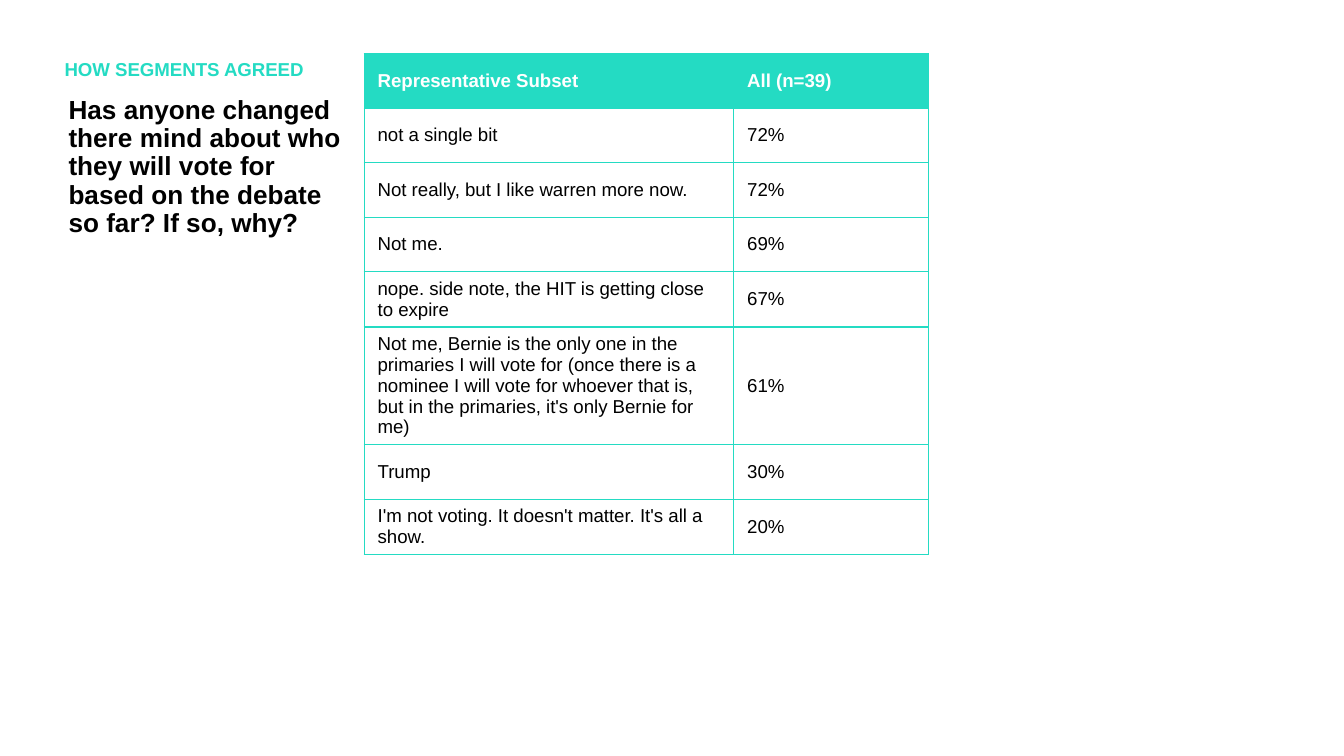
from dataclasses import dataclass

from lxml.etree import SubElement
from pptx import Presentation
from pptx.dml.color import RGBColor as RGB
from pptx.enum.text import MSO_ANCHOR as ANCHOR, MSO_AUTO_SIZE as AUTO, PP_ALIGN as ALIGN
from pptx.oxml.ns import qn
from pptx.util import Pt


@dataclass(frozen=True)
class Theme:
    """Colours, font and type sizes of the slide."""
    accent: str = "24DBC3"
    ink: str = "000000"
    paper: str = "FFFFFF"
    font: str = "Arial"
    title: int = 14
    body: int = 10
    border: float = 0.75


ROWS = [
    ("Representative Subset", "All (n=39)"),
    ("not a single bit", "72%"),
    ("Not really, but I like warren more now.", "72%"),
    ("Not me.", "69%"),
    ("nope. side note, the HIT is getting close to expire", "67%"),
    ("Not me, Bernie is the only one in the primaries I will vote for (once there is a "
     "nominee I will vote for whoever that is, but in the primaries, it's only Bernie for me)",
     "61%"),
    ("Trump", "30%"),
    ("I'm not voting. It doesn't matter. It's all a show.", "20%"),
]


def write(tf, text, *, font, size, color, bold=False, spacing=None):
    """Put one formatted, left-aligned paragraph in a text frame."""
    p = tf.paragraphs[0]
    p.alignment = ALIGN.LEFT
    if spacing:
        p.line_spacing = spacing
    r = p.add_run()
    r.text = text
    r.font.name = font
    r.font.size = Pt(size)
    r.font.bold = bold
    r.font.color.rgb = RGB.from_string(color)


def outline(cell, color, width):
    """Draw all four borders of a table cell."""
    tcPr = cell._tc.get_or_add_tcPr()
    for i, side in enumerate(("a:lnL", "a:lnR", "a:lnT", "a:lnB")):
        ln = SubElement(tcPr, qn(side), w=str(Pt(width)))
        SubElement(SubElement(ln, qn("a:solidFill")), qn("a:srgbClr"), val=color)
        tcPr.insert(i, ln)


class Deck:
    """Hold the theme and the current slide."""

    def __init__(self, prs, theme):
        """Start a title-only slide."""
        self.t = theme
        self.s = prs.slides.add_slide(prs.slide_layouts[5])

    def frame(self, sp, text, **fmt):
        """Set up a top-anchored wrapped text frame and fill it."""
        tf = sp.text_frame
        tf.word_wrap = True
        tf.auto_size = AUTO.NONE
        tf.vertical_anchor = ANCHOR.TOP
        write(tf, text, font=self.t.font, bold=True, spacing=0.9, **fmt)

    def title(self, text, x, y, w, h):
        """Place the title placeholder."""
        sp = self.s.shapes.title
        sp.left, sp.top, sp.width, sp.height = map(Pt, (x, y, w, h))
        self.frame(sp, text, size=self.t.title, color=self.t.ink)

    def label(self, text, x, y, w, h):
        """Add a small accent heading."""
        sp = self.s.shapes.add_textbox(*map(Pt, (x, y, w, h)))
        self.frame(sp, text, size=self.t.body, color=self.t.accent)

    def table(self, rows, x, y, widths, row_h):
        """Add a bordered table with an accent header row."""
        t = self.t
        box = map(Pt, (x, y, sum(widths), row_h * len(rows)))
        table = self.s.shapes.add_table(len(rows), len(widths), *box).table
        table.horz_banding = False
        for col, w in zip(table.columns, widths):
            col.width = Pt(w)
        for i, row in enumerate(rows):
            head = i == 0
            table.rows[i].height = Pt(row_h)
            for cell, text in zip(table.rows[i].cells, row):
                cell.vertical_anchor = ANCHOR.MIDDLE
                cell.fill.solid()
                cell.fill.fore_color.rgb = RGB.from_string(t.accent if head else t.paper)
                write(cell.text_frame, text, font=t.font, size=t.body, bold=head,
                      color=t.paper if head else t.ink)
                outline(cell, t.accent, t.border)


def main():
    """Build and save the slide."""
    prs = Presentation()
    prs.slide_width, prs.slide_height = Pt(720), Pt(405)
    deck = Deck(prs, Theme())
    deck.title("Has anyone changed there mind about who they will vote for "
               "based on the debate so far? If so, why?", 29.5, 48.25, 165.6, 317.5)
    deck.label("HOW SEGMENTS AGREED", 27.5, 28.8, 167, 20)
    deck.table(ROWS, 195.1, 28.8, (198, 104.4), 29.2)
    prs.save("out.pptx")


if __name__ == "__main__":
    main()
